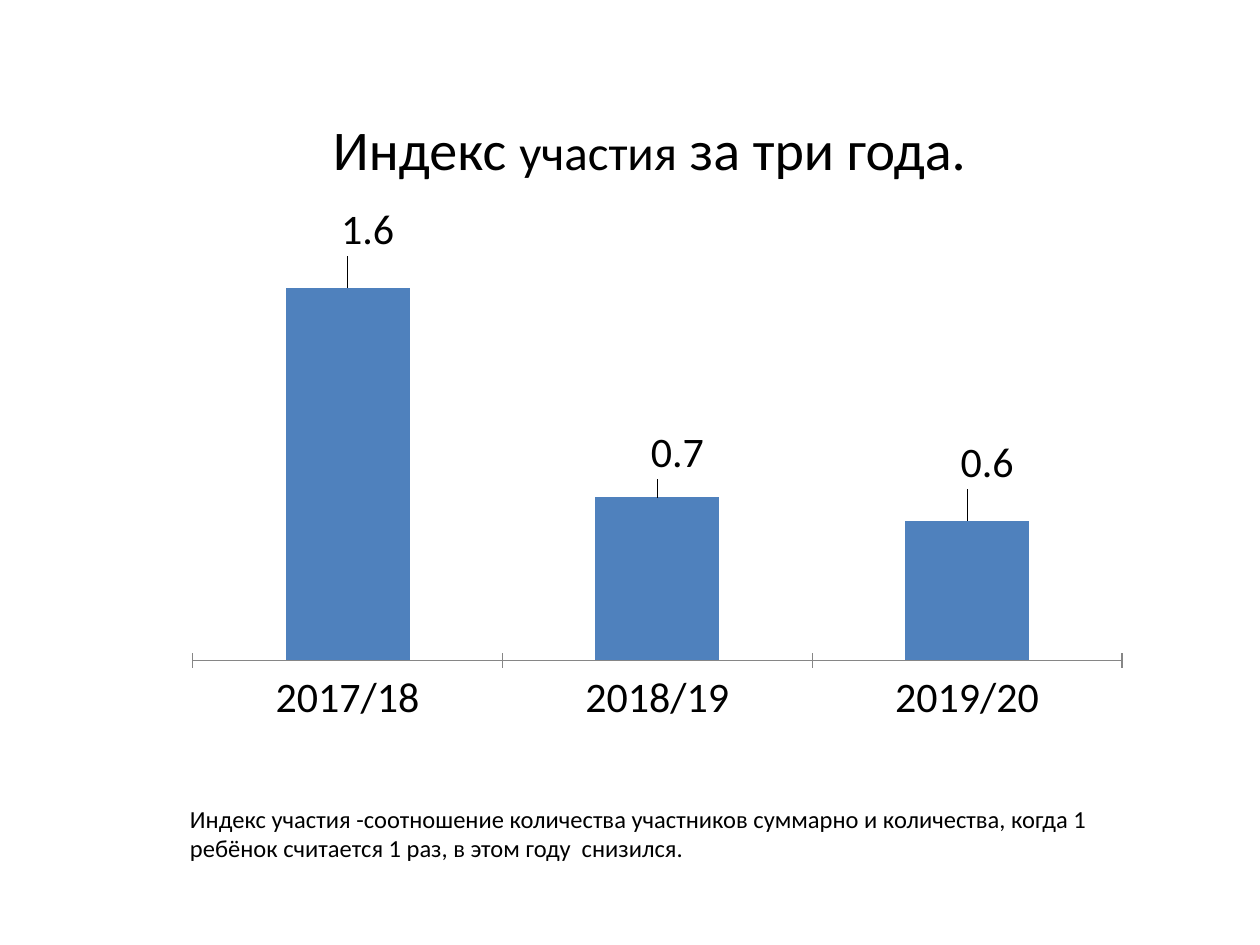
from dataclasses import dataclass

from pptx import Presentation
from pptx.chart.data import CategoryChartData
from pptx.dml.color import RGBColor as RGB
from pptx.enum.chart import XL_CHART_TYPE as Kind, XL_LABEL_POSITION as Pos, XL_TICK_MARK as Tick
from pptx.enum.text import MSO_ANCHOR as Anchor, MSO_AUTO_SIZE as Fit, PP_ALIGN as Align
from pptx.oxml import parse_xml
from pptx.oxml.ns import nsdecls, qn
from pptx.util import Inches, Pt


@dataclass(frozen=True)
class Theme:
    face: str = "Calibri"
    ink: RGB = RGB(0x00, 0x00, 0x00)
    bar: RGB = RGB(0x4F, 0x81, 0xBD)
    axis: RGB = RGB(0x86, 0x86, 0x86)
    head: int = 32
    sub: int = 28
    mark: int = 24
    note: int = 14


theme = Theme()


def style(font, size):
    font.name, font.size, font.bold = theme.face, Pt(size), False
    font.color.rgb = theme.ink


def place(node, index, tags):
    """Give a chart part a manual layout, in shares of the chart."""
    for old in node.findall(qn("c:layout")):
        node.remove(old)
    body = "".join(f'<c:{tag} val="{val}"/>' for tag, val in tags.items())
    node.insert(index, parse_xml(
        f'<c:layout {nsdecls("c")}><c:manualLayout>{body}</c:manualLayout></c:layout>'))


deck = Presentation()
deck.slide_width, deck.slide_height = Inches(10), Inches(7.5)
slide = deck.slides.add_slide(deck.slide_layouts[5])

# Chart
data = CategoryChartData()
data.categories = ["2017/18", "2018/19", "2019/20"]
data.add_series("Series 1", [1.6, 0.7, 0.6])
chart = slide.shapes.add_chart(
    Kind.COLUMN_CLUSTERED, Inches(0.94), Inches(1.56), Inches(7.97), Inches(5.23), data).chart
style(chart.font, 10)
chart.has_legend = chart.has_title = False
place(chart._chartSpace.chart.plotArea, 0, {
    "layoutTarget": "inner", "xMode": "edge", "yMode": "edge",
    "x": 0.074, "y": 0.068, "w": 0.926, "h": 0.636})

years = chart.category_axis
years.major_tick_mark = Tick.CROSS
years.format.line.color.rgb = theme.axis
style(years.tick_labels.font, theme.mark)
scale = chart.value_axis
scale.minimum_scale, scale.maximum_scale = 0, 1.8
scale.has_major_gridlines = scale.visible = False

plot = chart.plots[0]
plot.gap_width, plot.vary_by_categories = 150, False
bars = plot.series[0]
bars.format.fill.solid()
bars.format.fill.fore_color.rgb = theme.bar
labels = bars.data_labels
labels.show_value = True
style(labels.font, theme.mark)
for i, lift in enumerate([-0.04, -0.02, -0.04]):
    label = bars.points[i].data_label
    style(label.font, theme.mark)
    label.position = Pos.OUTSIDE_END
for node, lift in zip(labels._element.findall(qn("c:dLbl")), [-0.04, -0.02, -0.04]):
    place(node, 1, {"x": 0.02, "y": lift})

# Title and note
title = slide.shapes.title
title.left, title.top, title.width, title.height = map(Inches, (1.64, 0.86, 7.03, 0.64))
note = slide.shapes.add_textbox(Inches(1.41), Inches(6.33), Inches(7.5), Inches(0.57))
texts = [
    (title, Align.CENTER, [("Индекс ", theme.head), ("участия", theme.sub),
                           (" за три года.", theme.head)]),
    (note, Align.LEFT, [("Индекс участия -соотношение количества участников суммарно и количества, "
                         "когда 1 ребёнок считается 1 раз, в этом году  снизился.", theme.note)]),
]
for box, align, runs in texts:
    frame = box.text_frame
    frame.word_wrap, frame.auto_size = True, Fit.SHAPE_TO_FIT_TEXT
    frame.vertical_anchor = Anchor.TOP
    para = frame.paragraphs[0]
    para.alignment = align
    for words, size in runs:
        run = para.add_run()
        run.text = words
        style(run.font, size)

deck.save("out.pptx")
